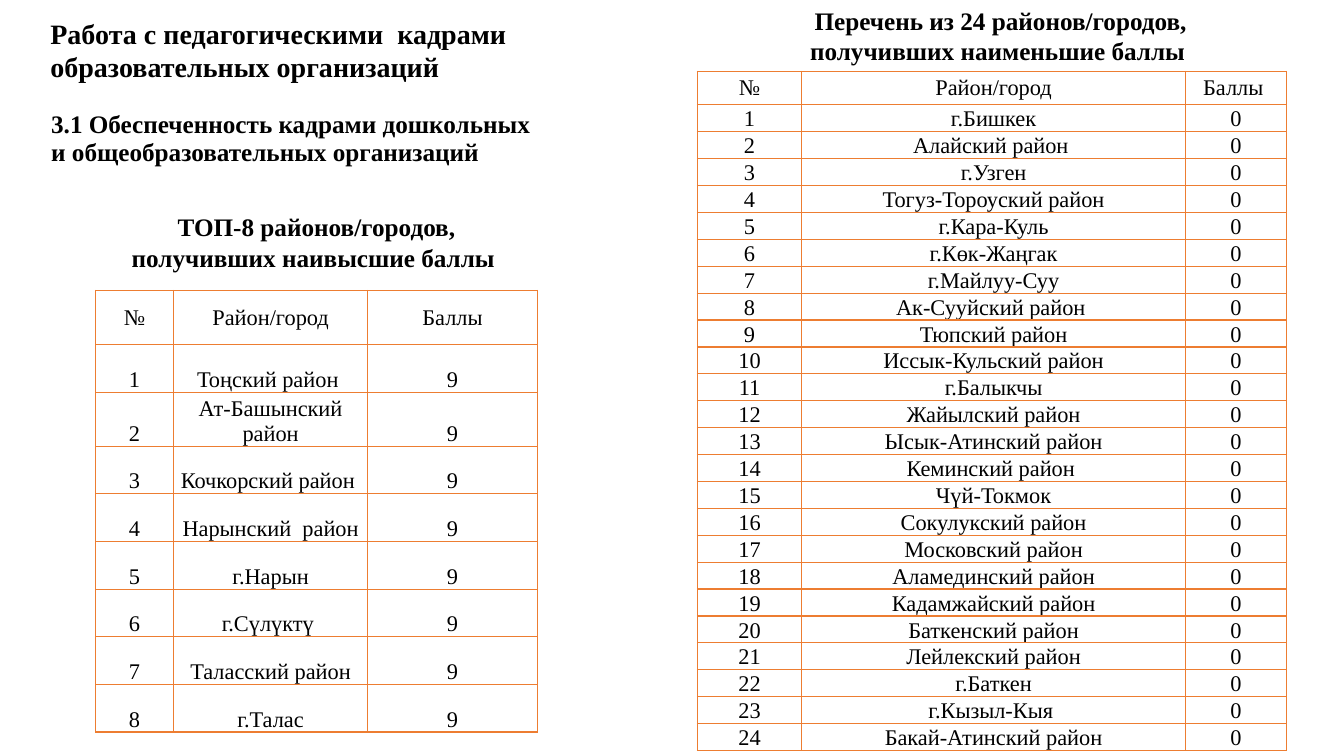
from dataclasses import dataclass

from lxml.etree import SubElement as Sub
from pptx import Presentation
from pptx.dml.color import RGBColor as Rgb
from pptx.enum.text import MSO_ANCHOR as Anchor, MSO_AUTO_SIZE as Auto, PP_ALIGN as Align
from pptx.oxml.ns import qn
from pptx.util import Cm, Pt


@dataclass(frozen=True)
class Theme:
    """Colours, font and type sizes."""
    face: str = "Times New Roman"
    ink: str = "000000"
    edge: str = "ED7D31"
    head: int = 20
    sub: int = 18
    cell: int = 16
    line: int = 1


@dataclass(frozen=True)
class Box:
    """A place on the slide in centimetres."""
    x: float
    y: float
    w: float
    h: float

    def inner(self, x, y, w, h):
        """Return a box offset from this one."""
        return Box(self.x + x, self.y + y, w, h)

    def size(self):
        """Return left, top, width and height as lengths."""
        return Cm(self.x), Cm(self.y), Cm(self.w), Cm(self.h)


THEME = Theme()
HEAD = ("Работа с педагогическими  кадрами", "образовательных организаций")
TOPIC = "3.1 Обеспеченность кадрами дошкольных \vи общеобразовательных организаций"
BEST = ("Тоңский район ", "Ат-Башынский район", "Кочкорский район ", "Нарынский  район",
        "г.Нарын", "г.Сүлүктү ", "Таласский район", "г.Талас")
LEAST = ("г.Бишкек", "Алайский район ", "г.Узген", "Тогуз-Тороуский район",
         "г.Кара-Куль", "г.Көк-Жаңгак", "г.Майлуу-Суу", "Ак-Сууйский район ",
         "Тюпский район", "Иссык-Кульский район", "г.Балыкчы", "Жайылский район",
         "Ысык-Атинский район", "Кеминский район ", "Чүй-Токмок", "Сокулукский район",
         "Московский район", "Аламединский район", "Кадамжайский район",
         "Баткенский район", "Лейлекский район", "г.Баткен", "г.Кызыл-Кыя ",
         "Бакай-Атинский район")


def style(para, size, bold=False, align=Align.LEFT):
    """Set the font and alignment of a paragraph."""
    para.alignment = align
    font = para.font
    font.name, font.size, font.bold = THEME.face, Pt(size), bold
    font.color.rgb = Rgb.from_string(THEME.ink)


def label(slide, box, lines, size, align=Align.LEFT):
    """Add a bold text box and return its frame."""
    frame = slide.shapes.add_textbox(*box.size()).text_frame
    frame.word_wrap = True
    frame.text = "\n".join(lines)
    for para in frame.paragraphs:
        style(para, size, True, align)
    return frame


def border(cell):
    """Draw the four edges of a cell."""
    props = cell._tc.get_or_add_tcPr()
    for side in ("lnL", "lnR", "lnT", "lnB"):
        line = Sub(props, qn(f"a:{side}"), w=str(Pt(THEME.line)))
        Sub(Sub(line, qn("a:solidFill")), qn("a:srgbClr"), val=THEME.edge)


def fill(cell, text, anchor):
    """Write and format one table cell."""
    cell.text = text
    cell.vertical_anchor = anchor
    cell.margin_left = cell.margin_right = cell.margin_top = cell.margin_bottom = 0
    style(cell.text_frame.paragraphs[0], THEME.cell, align=Align.CENTER)
    border(cell)
    cell.fill.background()


def grid(slide, box, cols, top, rows):
    """Add a ruled table whose first row has its own height."""
    table = slide.shapes.add_table(len(rows), len(cols), *box.size()).table
    table.first_row = table.horz_banding = False
    for col, width in zip(table.columns, cols):
        col.width = Cm(width)
    step = (box.h - top) / (len(rows) - 1)
    for i, texts in enumerate(rows):
        table.rows[i].height = Cm(step if i else top)
        for j, text in enumerate(texts):
            fill(table.cell(i, j), text, Anchor.BOTTOM if i else Anchor.MIDDLE)


def intro(slide, box):
    """Place the heading and the topic below it."""
    head = label(slide, box.inner(0, 0, 12.98, 1.96), HEAD, THEME.head)
    head.auto_size = Auto.SHAPE_TO_FIT_TEXT
    for para in head.paragraphs:
        para._p.get_or_add_pPr().set("marL", str(Cm(0.44)))
    topic = label(slide, box.inner(0.46, 2.29, 13.11, 1.88), [TOPIC], THEME.sub)
    topic.vertical_anchor = Anchor.MIDDLE
    topic.paragraphs[0].line_spacing = 0.9


def rank(slide, box, title, span, shift, gap, cols, top, names, score, last="Баллы"):
    """Place a centred caption above a table of places and scores."""
    left = (box.w - span) / 2 + shift
    text = label(slide, box.inner(left, 0, span, 1.8), [title], THEME.sub, Align.CENTER)
    text.auto_size = Auto.SHAPE_TO_FIT_TEXT
    rows = [("№", "Район/город", last)]
    rows += [(str(i), name, score) for i, name in enumerate(names, 1)]
    grid(slide, box.inner(0, gap, box.w, box.h - gap), cols, top, rows)


def main():
    """Build and save the slide."""
    deck = Presentation()
    deck.slide_width, deck.slide_height = Cm(33.87), Cm(19.05)
    slide = deck.slides.add_slide(deck.slide_layouts[6])
    intro(slide, Box(0.58, 0.28, 13.57, 4.17))
    rank(slide, Box(2.41, 5.21, 11.13, 13.08),
         "ТОП-8 районов/городов, получивших наивысшие баллы ",
         10.01, 0, 2.11, (1.96, 4.9, 4.27), 1.37, BEST, "9")
    rank(slide, Box(17.58, 0, 14.84, 12.48),
         "Перечень из 24 районов/городов, получивших наименьшие баллы ",
         11.94, 0.22, 1.8, (2.62, 9.68, 2.54), 0.84, LEAST, "0", "Баллы ")
    deck.save("out.pptx")


if __name__ == "__main__":
    main()
